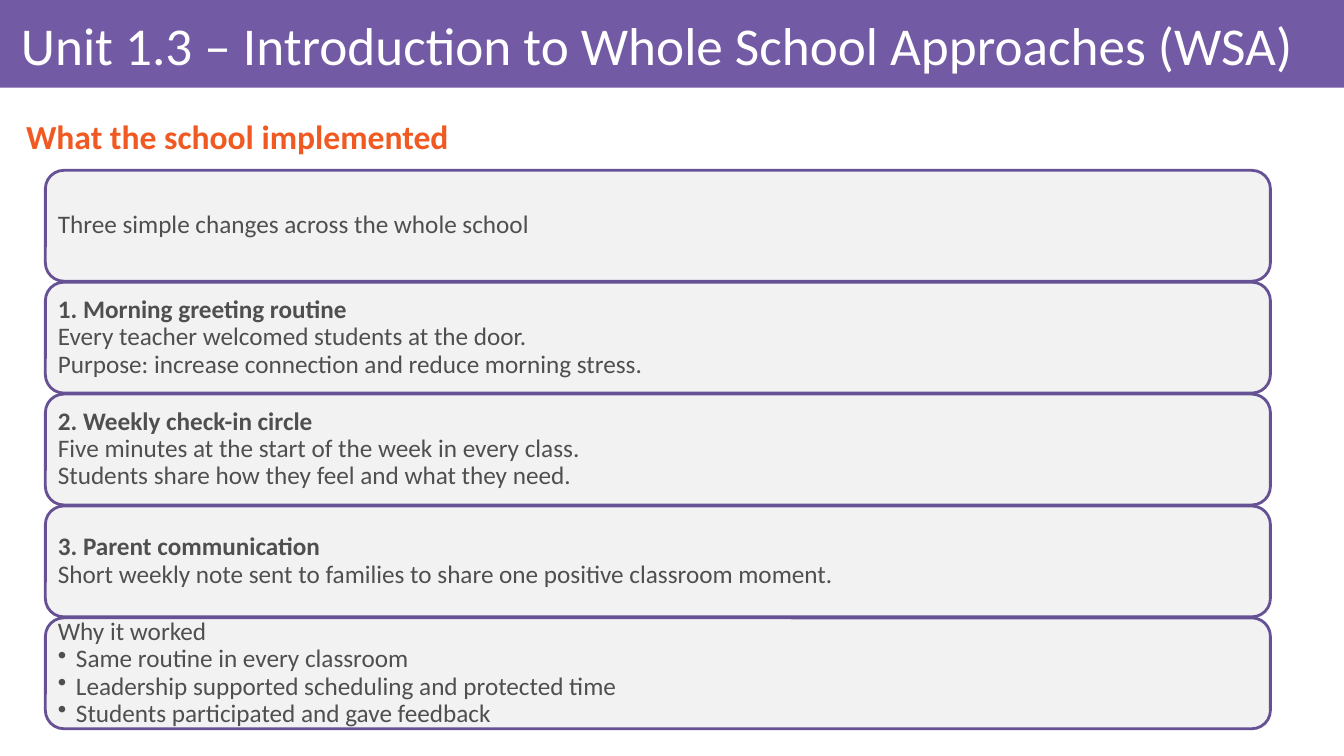
from pptx import Presentation, util as u
from pptx.dml.color import RGBColor
from pptx.enum import shapes, text
from pptx.oxml.ns import qn
from lxml import etree

PURPLE, OUTLINE, ORANGE = "735AA5", "675195", "F05A22"
PANEL, GREY, WHITE = "F2F2F2", "4F4F50", "FFFFFF"


def color(target, hex_code):
    """Colour a font, or give a fill a solid colour."""
    if hasattr(target, "solid"):
        target.solid()
        target.fore_color.rgb = RGBColor.from_string(hex_code)
    else:
        target.color.rgb = RGBColor.from_string(hex_code)


def write(frame, lines, size, hex_code, inset):
    """Fill a text frame; each line is a (wording, bold, bulleted) tuple."""
    frame.word_wrap = True
    frame.vertical_anchor = text.MSO_ANCHOR.MIDDLE
    frame.margin_left = frame.margin_right = u.Inches(inset)
    frame.margin_top = frame.margin_bottom = u.Inches(inset)
    for i, (wording, bold, bulleted) in enumerate(lines):
        line = frame.add_paragraph() if i else frame.paragraphs[0]
        line.text = wording
        line.alignment = text.PP_ALIGN.LEFT
        line.line_spacing = 0.9
        line.font.name, line.font.size, line.font.bold = "Calibri", u.Pt(size), bold
        color(line.font, hex_code)
        if bulleted:
            props = line._p.get_or_add_pPr()
            props.set("marL", str(u.Inches(0.18)))
            props.set("indent", str(-u.Inches(0.18)))
            bullet = etree.Element(qn("a:buChar"), char="•")
            props.find(qn("a:defRPr")).addprevious(bullet)


deck = Presentation()
deck.slide_width, deck.slide_height = u.Inches(13.33), u.Inches(7.5)
slide = deck.slides.add_slide(deck.slide_layouts[6])

# Title band
band = slide.shapes.add_shape(
    shapes.MSO_SHAPE.RECTANGLE, 0, 0, deck.slide_width, u.Inches(0.87))
band.shadow.inherit = False
color(band.fill, PURPLE)
band.line.fill.background()
title = slide.shapes.add_textbox(
    u.Inches(0.11), u.Inches(0.09), u.Inches(13.06), u.Inches(0.78))
write(title.text_frame,
      [("Unit 1.3 – Introduction to Whole School Approaches (WSA)", False, False)],
      38, WHITE, 0.06)
title.text_frame.margin_left = u.Inches(0.1)

# Heading
heading = slide.shapes.add_textbox(
    u.Inches(0.16), u.Inches(1.08), u.Inches(12.8), u.Inches(0.6))
write(heading.text_frame, [("What the school implemented", True, False)],
      24, ORANGE, 0.1)

# Stacked panels
panels = [
    [("Three simple changes across the whole school", False, False)],
    [("1. Morning greeting routine", True, False),
     ("Every teacher welcomed students at the door.", False, False),
     ("Purpose: increase connection and reduce morning stress.", False, False)],
    [("2. Weekly check-in circle", True, False),
     ("Five minutes at the start of the week in every class.", False, False),
     ("Students share how they feel and what they need.", False, False)],
    [("3. Parent communication", True, False),
     ("Short weekly note sent to families to share one positive classroom moment.",
      False, False)],
    [("Why it worked", False, False),
     ("Same routine in every classroom", False, True),
     ("Leadership supported scheduling and protected time", False, True),
     ("Students participated and gave feedback", False, True)],
]
TOP, PITCH, HEIGHT = 1.69, 1.11, 1.1
for row, lines in enumerate(panels):
    panel = slide.shapes.add_shape(
        shapes.MSO_SHAPE.ROUNDED_RECTANGLE, u.Inches(0.45),
        u.Inches(TOP + row * PITCH), u.Inches(12.15), u.Inches(HEIGHT))
    panel.shadow.inherit = False
    color(panel.fill, PANEL)
    color(panel.line.fill, OUTLINE)
    panel.line.width = u.Pt(2)
    write(panel.text_frame, lines, 18, GREY, 0.07)

deck.save("out.pptx")
